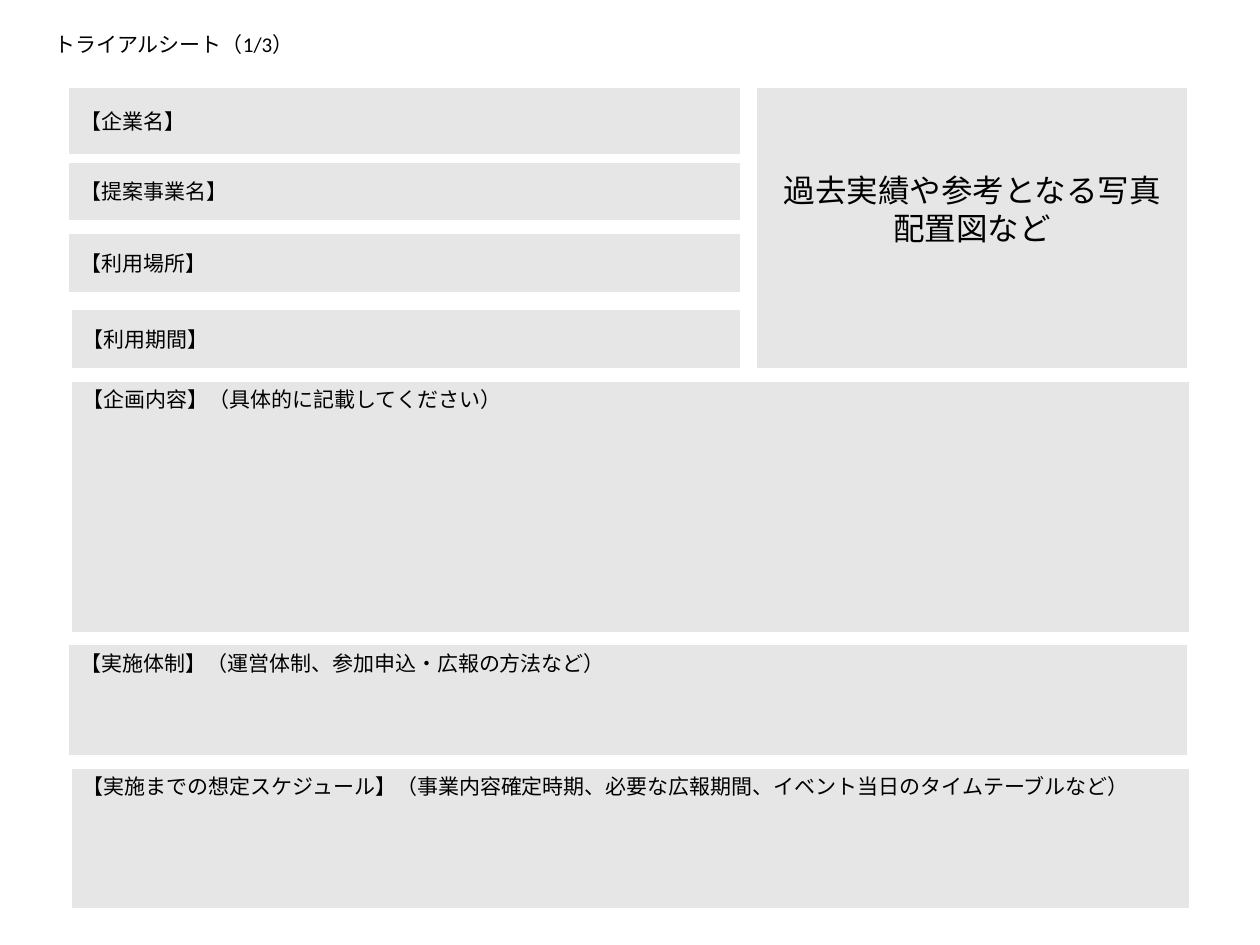
from pptx import Presentation
from pptx.dml.color import RGBColor
from pptx.enum.shapes import MSO_SHAPE
from pptx.enum.text import MSO_ANCHOR as Anchor, MSO_AUTO_SIZE as AutoSize, PP_ALIGN as Align
from pptx.util import Inches, Pt

COLORS = {"panel": "E7E6E6", "border": "FFFFFF", "text": "000000"}
FONT = "Calibri"
TITLE = "トライアルシート（1/3）"
PHOTO_LINES = ["過去実績や参考となる写真", "配置図など"]
ENTRY_FIELDS = [
    ("【企業名】", 0.54, 0.69, 5.34, 0.54),
    ("【提案事業名】", 0.54, 1.28, 5.34, 0.48),
    ("【利用場所】", 0.54, 1.85, 5.34, 0.48),
    ("【利用期間】", 0.56, 2.45, 5.32, 0.48),
]
DETAIL_FIELDS = [
    ("【企画内容】（具体的に記載してください）", 0.56, 3.02, 8.89, 2.01),
    ("【実施体制】（運営体制、参加申込・広報の方法など）", 0.54, 5.11, 8.89, 0.89),
    ("【実施までの想定スケジュール】（事業内容確定時期、必要な広報期間、"
     "イベント当日のタイムテーブルなど）", 0.56, 6.09, 8.89, 1.13),
]


def color(name):
    """Return the named colour."""
    return RGBColor.from_string(COLORS[name])


def write_lines(frame, lines, size, align, anchor):
    """Write each line as a formatted paragraph in the frame."""
    frame.word_wrap = True
    frame.vertical_anchor = anchor
    for index, line in enumerate(lines):
        para = frame.add_paragraph() if index else frame.paragraphs[0]
        para.alignment = align
        span = para.add_run()
        span.text = line
        span.font.name = FONT
        span.font.size = Pt(size)
        span.font.color.rgb = color("text")


def place_title(page):
    """Move the title placeholder to the top left and fill it."""
    title = page.shapes.title
    title.left, title.top = Inches(0.33), Inches(0.2)
    title.width, title.height = Inches(2.14), Inches(0.3)
    write_lines(title.text_frame, [TITLE], 12, Align.LEFT, Anchor.TOP)
    title.text_frame.auto_size = AutoSize.SHAPE_TO_FIT_TEXT


def add_panel(page, lines, bounds, anchor, size=12, align=Align.LEFT):
    """Add a grey panel with text and return it."""
    box = page.shapes.add_shape(MSO_SHAPE.RECTANGLE, *map(Inches, bounds))
    box.shadow.inherit = False
    box.fill.solid()
    box.fill.fore_color.rgb = color("panel")
    box.line.color.rgb = color("border")
    box.line.width = Pt(1.5)
    write_lines(box.text_frame, lines, size, align, anchor)
    return box


def main():
    """Build the trial sheet."""
    deck = Presentation()
    deck.slide_width, deck.slide_height = Inches(10), Inches(7.5)
    page = deck.slides.add_slide(deck.slide_layouts.get_by_name("Title Only"))
    place_title(page)
    photo = add_panel(page, PHOTO_LINES, (6, 0.69, 3.43, 2.24), Anchor.MIDDLE, 18, Align.CENTER)
    photo.text_frame.margin_bottom = Inches(0.35)
    for fields, anchor in ((ENTRY_FIELDS, Anchor.MIDDLE), (DETAIL_FIELDS, Anchor.TOP)):
        for label, *bounds in fields:
            add_panel(page, [label], bounds, anchor)
    deck.save("out.pptx")


if __name__ == "__main__":
    main()
